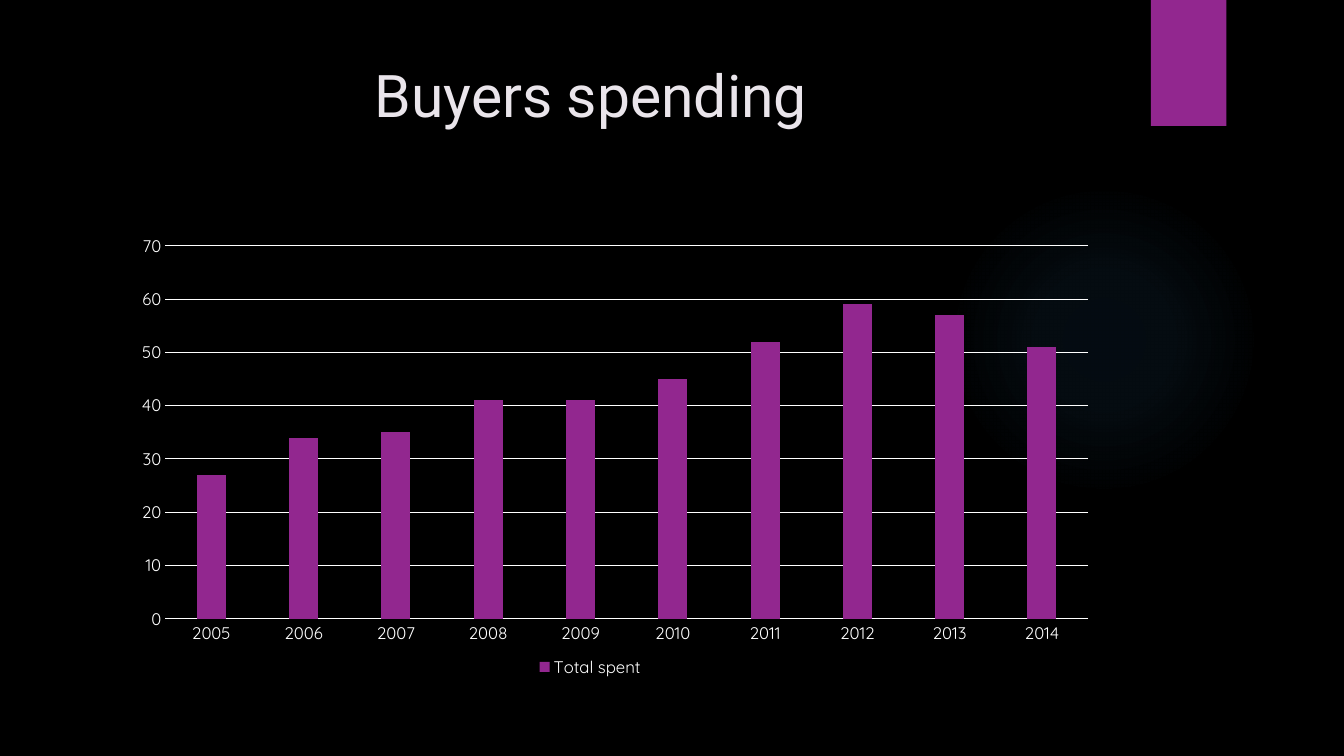
from dataclasses import dataclass

import pptx
import pptx.chart.data
import pptx.dml.color
import pptx.enum.chart
import pptx.enum.shapes
import pptx.enum.text
import pptx.oxml
import pptx.oxml.ns
import pptx.util
from pptx.util import Pt

COLORS = {
    "background": "000000",
    "accent": "92278F",
    "second": "9B57D3",
    "third": "755DD9",
    "glow": "45A5ED",
    "title": "EAE5EB",
    "chart": "FFFFFF",
}
SPENDING = {
    "2005": 27, "2006": 34, "2007": 35, "2008": 41, "2009": 41,
    "2010": 45, "2011": 52, "2012": 59, "2013": 57, "2014": 51,
}
GLOW_STOPS = ((0, 7), (36, 6), (69, 0))


@dataclass(frozen=True)
class Box:
    left: float
    top: float
    width: float
    height: float

    def lengths(self) -> tuple:
        return tuple(Pt(value) for value in (self.left, self.top, self.width, self.height))


@dataclass(frozen=True)
class Decoration:
    kind: pptx.enum.shapes.MSO_SHAPE
    box: Box
    color: str


@dataclass(frozen=True)
class Series:
    name: str
    values: tuple
    color: str


GLOW = Decoration(pptx.enum.shapes.MSO_SHAPE.OVAL, Box(677.5, 131.75, 221.75, 221.75), "glow")
TAB = Decoration(pptx.enum.shapes.MSO_SHAPE.RECTANGLE, Box(822, 0, 54, 90), "accent")
TITLE_BOX = Box(83.5, 38.15, 740.9, 74.15)
CHART_BOX = Box(87.1, 161.3, 704.2, 330.5)
PLOT_BOX = Box(118, 175.6, 659.2, 266.4)
LEGEND_LEFT, LEGEND_TOP = 381.5, 466.1
UNUSED = (None,) * len(SPENDING)
SERIES = (
    Series("Total spent", tuple(SPENDING.values()), "accent"),
    Series("Series 2", UNUSED, "second"),
    Series("", UNUSED, "third"),
)


def rgb(name: str) -> pptx.dml.color.RGBColor:
    return pptx.dml.color.RGBColor.from_string(COLORS[name])


def parse_element(body: str, prefix: str):
    return pptx.oxml.parse_xml(body.replace(">", f" {pptx.oxml.ns.nsdecls(prefix)}>", 1))


def add_decoration(slide, decoration: Decoration):
    shape = slide.shapes.add_shape(decoration.kind, *decoration.box.lengths())
    shape.shadow.inherit = False
    shape.fill.solid()
    shape.fill.fore_color.rgb = rgb(decoration.color)
    shape.line.fill.background()
    return shape


def apply_glow(shape) -> None:
    stops = "".join(
        f'<a:gs pos="{position * 1000}"><a:srgbClr val="{COLORS["glow"]}">'
        f'<a:alpha val="{alpha * 1000}"/></a:srgbClr></a:gs>'
        for position, alpha in GLOW_STOPS
    )
    gradient = parse_element(
        f'<a:gradFill><a:gsLst>{stops}</a:gsLst><a:path path="circle">'
        '<a:fillToRect l="50000" t="50000" r="50000" b="50000"/></a:path></a:gradFill>', "a"
    )
    properties = shape._element.spPr
    properties.replace(properties.find(pptx.oxml.ns.qn("a:solidFill")), gradient)


def apply_shadow(shape) -> None:
    shadow = parse_element(
        f'<a:outerShdw blurRad="{Pt(3)}" dist="{Pt(2)}" dir="5400000">'
        f'<a:srgbClr val="{COLORS["background"]}"><a:alpha val="45000"/></a:srgbClr>'
        '</a:outerShdw>', "a"
    )
    shape._element.spPr.find(pptx.oxml.ns.qn("a:effectLst")).append(shadow)


def format_title(title) -> None:
    title.left, title.top, title.width, title.height = TITLE_BOX.lengths()
    frame = title.text_frame
    frame.text = "Buyers spending"
    frame.word_wrap = True
    frame.auto_size = pptx.enum.text.MSO_AUTO_SIZE.NONE
    frame.vertical_anchor = pptx.enum.text.MSO_ANCHOR.TOP
    frame.margin_left = Pt(184)
    paragraph = frame.paragraphs[0]
    paragraph.alignment = pptx.enum.text.PP_ALIGN.LEFT
    paragraph.font.name = "Roboto"
    paragraph.font.size = Pt(42)
    paragraph.font.color.rgb = rgb("title")


def format_font(font, size: float) -> None:
    font.name = "Quicksand"
    font.size = Pt(size)
    font.color.rgb = rgb("chart")


def format_line(line) -> None:
    line.width = Pt(0.75)
    line.color.rgb = rgb("chart")


def make_layout(values: dict, target: str = ""):
    modes = "".join(f'<c:{axis}Mode val="edge"/>' for axis in "xy")
    sizes = "".join(f'<c:{name} val="{value:.4f}"/>' for name, value in values.items())
    return parse_element(
        f"<c:layout><c:manualLayout>{target}{modes}{sizes}</c:manualLayout></c:layout>", "c"
    )


def relative_position(left: float, top: float) -> dict:
    return {
        "x": (left - CHART_BOX.left) / CHART_BOX.width,
        "y": (top - CHART_BOX.top) / CHART_BOX.height,
    }


def place_chart_parts(chart) -> None:
    plot_area = chart._chartSpace.chart.plotArea
    legend = chart.legend._element
    for parent in (plot_area, legend):
        for layout in parent.findall(pptx.oxml.ns.qn("c:layout")):
            parent.remove(layout)
    sizes = {"w": PLOT_BOX.width / CHART_BOX.width, "h": PLOT_BOX.height / CHART_BOX.height}
    plot_values = relative_position(PLOT_BOX.left, PLOT_BOX.top) | sizes
    plot_area.insert(0, make_layout(plot_values, '<c:layoutTarget val="inner"/>'))
    position = legend.find(pptx.oxml.ns.qn("c:legendPos"))
    position.addnext(make_layout(relative_position(LEGEND_LEFT, LEGEND_TOP)))
    for index in reversed(range(1, len(SERIES))):
        position.addnext(parse_element(
            f'<c:legendEntry><c:idx val="{index}"/><c:delete val="1"/></c:legendEntry>', "c"
        ))


def add_spending_chart(slide) -> None:
    data = pptx.chart.data.CategoryChartData()
    data.categories = list(SPENDING)
    for series in SERIES:
        data.add_series(series.name, series.values)
    chart = slide.shapes.add_chart(
        pptx.enum.chart.XL_CHART_TYPE.COLUMN_STACKED, *CHART_BOX.lengths(), data
    ).chart
    chart.has_title = False
    format_font(chart.font, 10)

    plot = chart.plots[0]
    plot.gap_width = 219
    plot.overlap = 100
    plot.vary_by_categories = False
    for columns, series in zip(plot.series, SERIES):
        columns.format.fill.solid()
        columns.format.fill.fore_color.rgb = rgb(series.color)

    for axis in (chart.category_axis, chart.value_axis):
        axis.major_tick_mark = pptx.enum.chart.XL_TICK_MARK.NONE
        axis.minor_tick_mark = pptx.enum.chart.XL_TICK_MARK.NONE
        format_font(axis.tick_labels.font, 12)
    format_line(chart.category_axis.format.line)
    value_axis = chart.value_axis
    value_axis.minimum_scale, value_axis.maximum_scale = 0, 70
    value_axis.major_unit = 10
    value_axis.format.line.fill.background()
    format_line(value_axis.major_gridlines.format.line)

    chart.has_legend = True
    chart.legend.position = pptx.enum.chart.XL_LEGEND_POSITION.BOTTOM
    chart.legend.include_in_layout = False
    format_font(chart.legend.font, 12)
    place_chart_parts(chart)


def main() -> None:
    presentation = pptx.Presentation()
    presentation.slide_width, presentation.slide_height = Pt(960), Pt(540)
    slide = presentation.slides.add_slide(presentation.slide_layouts[5])
    slide.background.fill.solid()
    slide.background.fill.fore_color.rgb = rgb("background")
    apply_glow(add_decoration(slide, GLOW))
    apply_shadow(add_decoration(slide, TAB))
    format_title(slide.shapes.title)
    add_spending_chart(slide)
    presentation.save("out.pptx")


if __name__ == "__main__":
    main()
